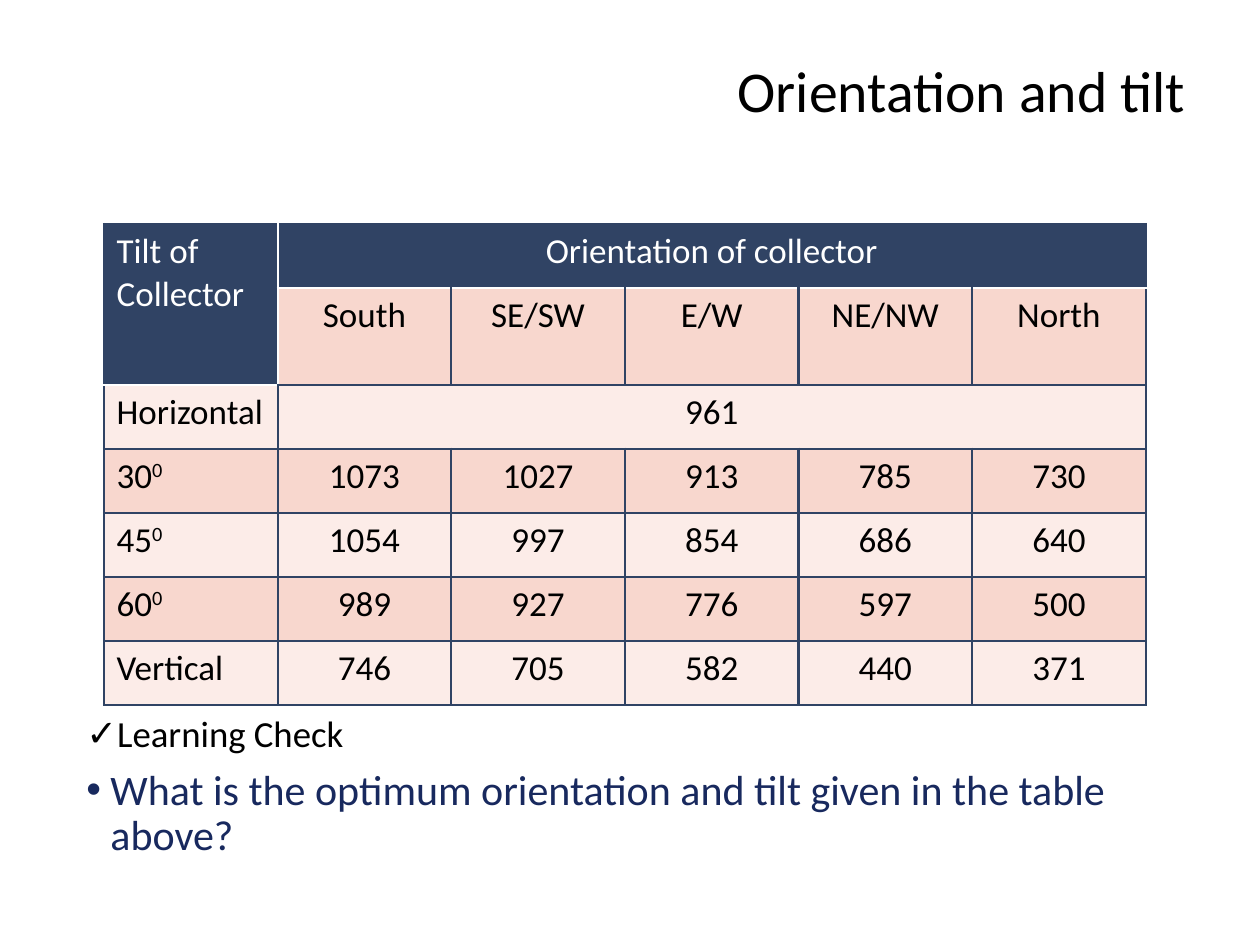
from dataclasses import dataclass

from lxml.etree import SubElement
from pptx import Presentation
from pptx.dml.color import RGBColor
from pptx.enum.text import MSO_ANCHOR, PP_ALIGN
from pptx.oxml.ns import qn
from pptx.util import Emu, Pt

PX = 914400 / 126


@dataclass(frozen=True)
class Theme:
    font: str = "Calibri"
    black: str = "000000"
    white: str = "FFFFFF"
    navy: str = "304364"
    question: str = "18295E"
    bands: tuple = ("FCECE8", "F8D7CE")
    title_size: int = 33
    check_size: int = 21
    question_size: int = 24
    table_size: int = 20
    border: float = 1.5


THEME = Theme()
ROWS = [
    ["Tilt of Collector", "Orientation of collector", "", "", "", ""],
    ["", "South", "SE/SW", "E/W", "NE/NW", "North"],
    ["Horizontal", "961", "", "", "", ""],
    ["30^0", "1073", "1027", "913", "785", "730"],
    ["45^0", "1054", "997", "854", "686", "640"],
    ["60^0", "989", "927", "776", "597", "500"],
    ["Vertical", "746", "705", "582", "440", "371"],
]
# First and last cell of each merged area, as (row, column)
MERGES = [((0, 0), (1, 0)), ((0, 1), (0, 5)), ((2, 1), (2, 5))]


def px(length):
    return Emu(round(length * PX))


def write(paragraph, text, size, color, align=PP_ALIGN.LEFT, line_spacing=None,
          space_before=None, bullet=None, indent=24):
    """Fill a paragraph; anything after ^ is superscript."""
    paragraph.alignment = align
    if line_spacing:
        paragraph.line_spacing = line_spacing
    if space_before:
        paragraph.space_before = Pt(space_before)
    if bullet:
        properties = paragraph._p.get_or_add_pPr()
        properties.set("marL", str(px(indent)))
        properties.set("indent", str(-px(indent)))
        SubElement(properties, qn("a:buFont"), typeface="Arial")
        SubElement(properties, qn("a:buChar"), char=bullet)
    for position, part in enumerate(text.split("^")):
        run = paragraph.add_run()
        run.text = part
        run.font.name = THEME.font
        run.font.size = Pt(size)
        run.font.color.rgb = RGBColor.from_string(color)
        if position:
            run._r.get_or_add_rPr().set("baseline", "30000")


def add_text_frame(slide, box, anchor=MSO_ANCHOR.TOP):
    text_frame = slide.shapes.add_textbox(*map(px, box)).text_frame
    text_frame.word_wrap = True
    text_frame.vertical_anchor = anchor
    return text_frame


def add_title(slide, box):
    text_frame = add_text_frame(slide, box, MSO_ANCHOR.MIDDLE)
    write(text_frame.paragraphs[0], "Orientation and tilt", THEME.title_size,
          THEME.black, align=PP_ALIGN.RIGHT, line_spacing=0.9)


def is_header(row, column):
    return row == 0 or (row, column) == (1, 0)


def set_borders(cell, row, column):
    """Draw white edges around header cells inside the table, navy elsewhere."""
    last_row, last_column = len(ROWS) - 1, len(ROWS[0]) - 1
    neighbours = {
        "a:lnL": (row, column - 1),
        "a:lnR": (row, column + cell.span_width),
        "a:lnT": (row - 1, column),
        "a:lnB": (row + cell.span_height, column),
    }
    properties = cell._tc.get_or_add_tcPr()
    for tag, (next_row, next_column) in neighbours.items():
        inside = 0 <= next_row <= last_row and 0 <= next_column <= last_column
        white = inside and (is_header(row, column) or is_header(next_row, next_column))
        line = SubElement(properties, qn(tag), w=str(Pt(THEME.border)))
        fill = SubElement(line, qn("a:solidFill"))
        SubElement(fill, qn("a:srgbClr"), val=THEME.white if white else THEME.navy)


def add_radiation_table(slide, box):
    left, top, width, height = box
    row_count, column_count = len(ROWS), len(ROWS[0])
    table = slide.shapes.add_table(row_count, column_count, *map(px, box)).table
    table.first_row = table.horz_banding = False
    for table_row in table.rows:
        table_row.height = px(height / row_count)
    for table_column in table.columns:
        table_column.width = px(width / column_count)
    for first, last in MERGES:
        table.cell(*first).merge(table.cell(*last))

    for row, texts in enumerate(ROWS):
        for column, text in enumerate(texts):
            cell = table.cell(row, column)
            header = is_header(row, column)
            set_borders(cell, row, column)
            cell.fill.solid()
            cell.fill.fore_color.rgb = RGBColor.from_string(
                THEME.navy if header else THEME.bands[row % 2])
            if text:
                write(cell.text_frame.paragraphs[0], text, THEME.table_size,
                      THEME.white if header else THEME.black,
                      align=PP_ALIGN.CENTER if column else PP_ALIGN.LEFT)


def add_learning_check(slide, box):
    text_frame = add_text_frame(slide, box)
    write(text_frame.paragraphs[0], "Learning Check", THEME.check_size,
          THEME.black, line_spacing=0.9, bullet="✓")
    write(text_frame.add_paragraph(),
          "What is the optimum orientation and tilt given in the table above?",
          THEME.question_size, THEME.question, line_spacing=0.9,
          space_before=7.5, bullet="•")


def main():
    presentation = Presentation()
    presentation.slide_width, presentation.slide_height = px(1260), px(945)
    slide = presentation.slides.add_slide(presentation.slide_layouts[6])
    add_title(slide, (312, 26, 886, 136))
    add_learning_check(slide, (74, 710, 1101, 178))
    add_radiation_table(slide, (104, 224, 1042, 448))
    presentation.save("out.pptx")


if __name__ == "__main__":
    main()
